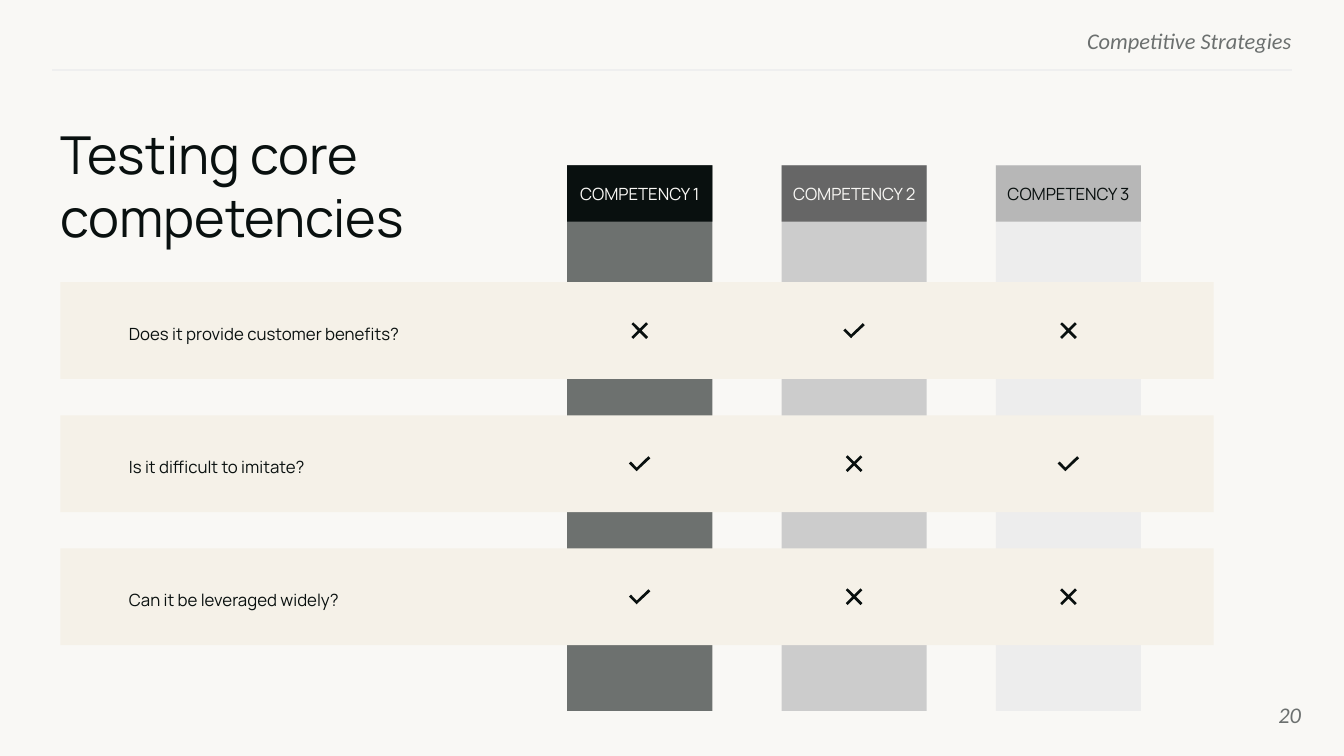
import dataclasses

import lxml.etree
import pptx
import pptx.dml.color
import pptx.enum.shapes
import pptx.enum.text
import pptx.oxml.ns
import pptx.util

Inches = pptx.util.Inches
Pt = pptx.util.Pt
Align = pptx.enum.text.PP_ALIGN
Anchor = pptx.enum.text.MSO_ANCHOR
qn = pptx.oxml.ns.qn

INK = "09100F"
PAPER = "F9F8F5"
BAND = "F5F1E8"
MUTED = "6C706F"

COLUMN_LEFT, COLUMN_TOP, COLUMN_WIDTH = 4.22, 1.23, 1.08
COLUMN_HEIGHT, HEADER_HEIGHT = 4.06, 0.42
COLUMN_PITCH = (7.41 - COLUMN_LEFT) / 2
BAND_LEFT, BAND_TOP, BAND_WIDTH, BAND_HEIGHT = 0.45, 2.1, 8.58, 0.72
BAND_PITCH = 0.99

# Outlines in hundredths of an inch around the centre of a cell
CROSS = [(6.2, -4.8), (4.8, -6.2), (0, -1.4), (-4.8, -6.2), (-6.2, -4.8), (-1.4, 0),
         (-6.2, 4.8), (-4.8, 6.2), (0, 1.4), (4.8, 6.2), (6.2, 4.8), (1.4, 0)]
CHECK = [(6.5, -5.5), (-2.2, 3), (-6.5, -1.5), (-8, 0), (-2.2, 5.7), (-0.5, 4), (8, -4)]


@dataclasses.dataclass
class Competency:
    name: str
    header_fill: str
    header_ink: str
    column_fill: str
    opacity: int = 100


@dataclasses.dataclass
class Question:
    wording: str
    width: float
    answers: tuple[bool, bool, bool]


COMPETENCIES = [
    Competency("COMPETENCY 1", INK, PAPER, INK, opacity=58),
    Competency("COMPETENCY 2", "666666", PAPER, "CCCCCC"),
    Competency("COMPETENCY 3", "B7B7B7", INK, "EDEDED"),
]
QUESTIONS = [
    Question("Does it provide customer benefits?", 2.87, (False, True, False)),
    Question("Is it difficult to imitate?", 2.54, (True, False, True)),
    Question("Can it be leveraged widely?", 2.16, (True, False, False)),
]


def rgb(color: str):
    return pptx.dml.color.RGBColor.from_string(color)


def paint(shape, color: str, opacity: int = 100) -> None:
    """Give a shape a plain fill without line or shadow."""
    shape.shadow.inherit = False
    shape.line.fill.background()
    shape.fill.solid()
    shape.fill.fore_color.rgb = rgb(color)
    if opacity < 100:
        fill_color = shape.fill._xPr.find(qn("a:solidFill"))[0]
        lxml.etree.SubElement(fill_color, qn("a:alpha")).set("val", str(opacity * 1000))


def write(shape, wording: str, size: float, color: str, font: str = "Manrope",
          align=Align.LEFT, anchor=Anchor.TOP, inset=(0, 0),
          italic: bool = False) -> None:
    frame = shape.text_frame
    frame.text = wording
    frame.word_wrap = True
    frame.vertical_anchor = anchor
    frame.margin_left = frame.margin_right = Inches(inset[0])
    frame.margin_top = frame.margin_bottom = Inches(inset[1])
    paragraph = frame.paragraphs[0]
    paragraph.alignment = align
    style = paragraph.runs[0].font
    style.name, style.size, style.italic = font, Pt(size), italic
    style.color.rgb = rgb(color)


def add_box(slide, left: float, top: float, width: float, height: float,
            color: str, opacity: int = 100):
    box = slide.shapes.add_shape(
        pptx.enum.shapes.MSO_SHAPE.RECTANGLE,
        Inches(left), Inches(top), Inches(width), Inches(height))
    paint(box, color, opacity)
    return box


def add_label(slide, left: float, top: float, width: float, height: float,
              wording: str, size: float, color: str, **style) -> None:
    label = slide.shapes.add_textbox(
        Inches(left), Inches(top), Inches(width), Inches(height))
    write(label, wording, size, color, **style)


def add_mark(slide, outline: list, x: float, y: float) -> None:
    points = [(Inches(x + dx / 100), Inches(y + dy / 100)) for dx, dy in outline]
    builder = slide.shapes.build_freeform(*points[0])
    builder.add_line_segments(points[1:], close=True)
    paint(builder.convert_to_shape(), INK)


def add_frame(slide) -> None:
    """Draw the running head, its rule and the page number."""
    footer = dict(font="Calibri", align=Align.RIGHT, italic=True)
    add_label(slide, 5.76, 0.2, 3.85, 0.18, "Competitive Strategies", 12, MUTED, **footer)
    rule = slide.shapes.add_connector(
        pptx.enum.shapes.MSO_CONNECTOR.STRAIGHT,
        Inches(9.61), Inches(0.52), Inches(0.39), Inches(0.52))
    rule.line.color.rgb = rgb("EFEFEF")
    rule.line.width = Pt(0.75)
    lxml.etree.SubElement(rule._element.spPr, qn("a:effectLst"))
    add_label(slide, 9.08, 5.1, 0.6, 0.43, "20", 12, MUTED, anchor=Anchor.MIDDLE, **footer)


def add_title(slide) -> None:
    title = slide.shapes.title
    title.left, title.top = Inches(0.45), Inches(0.91)
    title.width, title.height = Inches(3.91), Inches(0.51)
    write(title, "Testing core competencies", 28, INK)
    title.text_frame.paragraphs[0].space_after = Pt(10)
    title.text_frame.auto_size = pptx.enum.text.MSO_AUTO_SIZE.NONE


def add_matrix(slide) -> None:
    lefts = [COLUMN_LEFT + i * COLUMN_PITCH for i in range(len(COMPETENCIES))]
    for left, competency in zip(lefts, COMPETENCIES):
        add_box(slide, left, COLUMN_TOP, COLUMN_WIDTH, COLUMN_HEIGHT,
                competency.column_fill, competency.opacity)
        header = add_box(slide, left, COLUMN_TOP, COLUMN_WIDTH, HEADER_HEIGHT,
                         competency.header_fill)
        write(header, competency.name, 9, competency.header_ink,
              align=Align.CENTER, anchor=Anchor.MIDDLE)
    for i, question in enumerate(QUESTIONS):
        top = BAND_TOP + i * BAND_PITCH
        add_box(slide, BAND_LEFT, top, BAND_WIDTH, BAND_HEIGHT, BAND)
        add_label(slide, 0.88, top + 0.27, question.width, 0.23, question.wording, 9, INK,
                  inset=(0.08, 0.04))
        for left, passed in zip(lefts, question.answers):
            add_mark(slide, CHECK if passed else CROSS,
                     left + COLUMN_WIDTH / 2, top + BAND_HEIGHT / 2)


def main() -> None:
    deck = pptx.Presentation()
    deck.slide_width = Inches(10)
    deck.slide_height = deck.slide_width * 9 // 16
    slide = deck.slides.add_slide(deck.slide_layouts.get_by_name("Title Only"))
    slide.background.fill.solid()
    slide.background.fill.fore_color.rgb = rgb(PAPER)
    add_frame(slide)
    add_matrix(slide)
    add_title(slide)
    deck.save("out.pptx")


if __name__ == "__main__":
    main()
